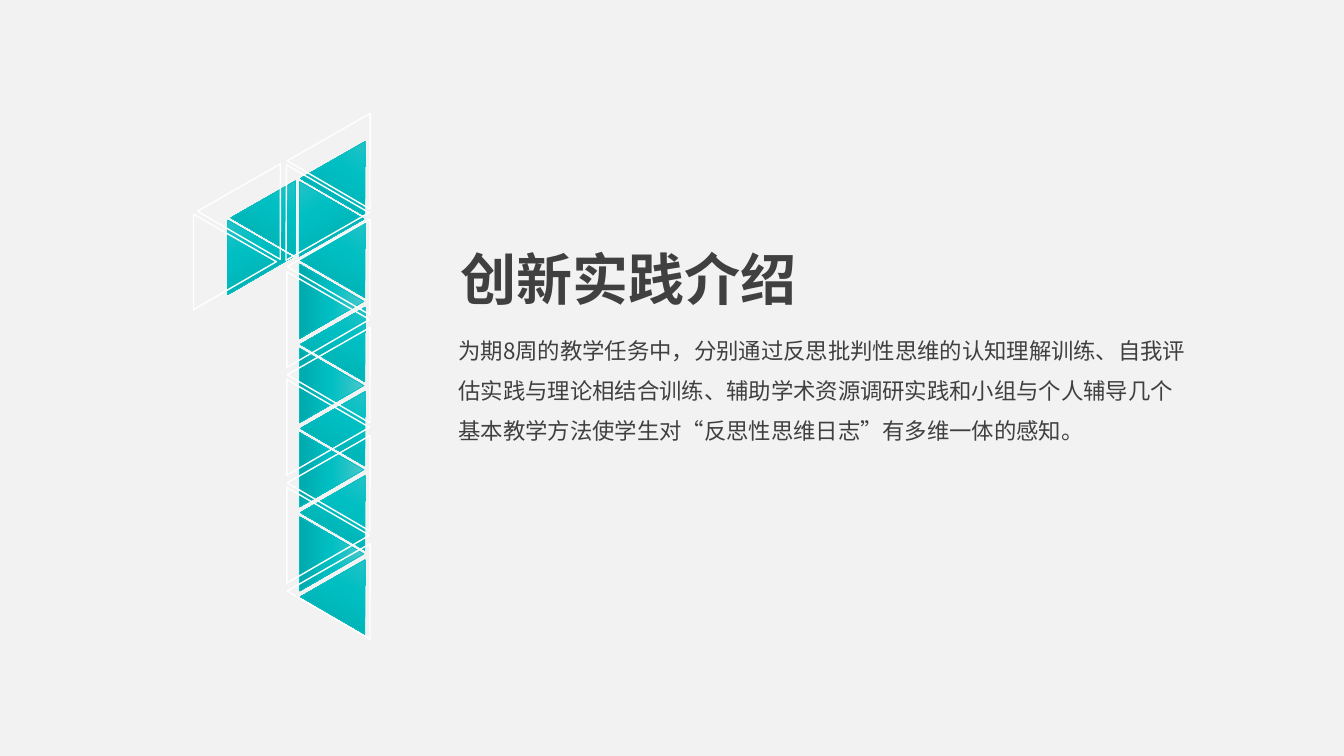
from copy import deepcopy

from pptx import Presentation
from pptx import util as u
from pptx.dml.color import RGBColor
from pptx.enum import shapes, text
from pptx.oxml import ns

PX = 9144
WIDE, HIGH = 1333, 750
PALE = RGBColor(0xF2, 0xF2, 0xF2)
DARK = RGBColor(0x40, 0x40, 0x40)
WHITE = RGBColor(0xFF, 0xFF, 0xFF)
LIGHT = RGBColor(0x4B, 0xC7, 0xCB)
TEAL = RGBColor(0x00, 0xBF, 0xC3)
DEEP = RGBColor(0x00, 0xAA, 0xAD)
LATIN = "League Spartan"
HAN = "Noto Sans CJK SC"

HEAD = "创新实践介绍"
BODY = ("为期8周的教学任务中，分别通过反思批判性思维的认知理解训练、自我评估实践与理论相结合训练、"
        "辅助学术资源调研实践和小组与个人辅导几个基本教学方法使学生对“反思性思维日志”有多维一体的感知。")


def px(*nums):
    return [u.Emu(round(n * PX)) for n in nums]


def write(shape, words, size, font, bold=False, gap=1.0,
          anchor=text.MSO_ANCHOR.TOP):
    frame = shape.text_frame
    frame.word_wrap = True
    frame.auto_size = text.MSO_AUTO_SIZE.NONE
    frame.vertical_anchor = anchor
    para = frame.paragraphs[0]
    para.alignment = text.PP_ALIGN.LEFT
    para.line_spacing = gap
    run = para.add_run()
    run.text = words
    run.font.size = u.Pt(size)
    run.font.bold = bold
    run.font.name = font
    run.font.color.rgb = DARK
    east = run.font._element.makeelement(ns.qn("a:ea"), {"typeface": HAN})
    run.font._element.find(ns.qn("a:latin")).addnext(east)


def shade(fill):
    fill.gradient()
    fill.gradient_angle = 270
    first = fill.gradient_stops[0]._gs
    first.addnext(deepcopy(first))
    for stop, place, tint in zip(fill.gradient_stops, (0, 0.5, 1), (LIGHT, TEAL, DEEP)):
        stop.position = place
        stop.color.rgb = tint


def wedge(group, box, turn, solid):
    shape = group.shapes.add_shape(shapes.MSO_SHAPE.ISOSCELES_TRIANGLE, *px(*box))
    shape.rotation = turn
    shape.shadow.inherit = False
    if solid:
        shade(shape.fill)
    else:
        shape.fill.background()
    shape.line.color.rgb = TEAL if solid else WHITE
    shape.line.width = u.Pt(0.5 if solid else 1)


def stack(x, y, step, count, turn):
    return [(x, y + step * i, turn) for i in range(count)]


def digit(slide, left, top):
    group = slide.shapes.add_group_shape()
    filled = [(40, 107, 329.9), (75, 68, 30.2), (111, 69, 330.2), (144, 29, 30.2)]
    filled += stack(144, 110, 83.5, 5, 30.2) + stack(127, 160, 83.5, 4, 90)
    hollow = [(0, 100, 329.9), (45, 50, 30.2), (92, 51, 330.2), (134, 0, 30.2)]
    hollow += stack(134, 105, 107.25, 4, 30.2) + stack(113, 169, 107, 3, 90)
    for solid, parts, size in ((True, filled, (74, 64)), (False, hollow, (95, 82))):
        for x, y, turn in parts:
            wedge(group, (left + x, top + y, *size), turn, solid)


def intro(slide, left, top):
    title = slide.shapes.title
    title.left, title.top, title.width, title.height = px(left + 2, top, 435, 68)
    write(title, HEAD, 40, LATIN, bold=True, gap=0.9, anchor=text.MSO_ANCHOR.MIDDLE)
    note = slide.shapes.add_textbox(*px(left, top + 70, 750, 68))
    write(note, BODY, 16, HAN, gap=u.Pt(28.6))


def main():
    deck = Presentation()
    deck.slide_width, deck.slide_height = px(WIDE, HIGH)
    slide = deck.slides.add_slide(deck.slide_layouts[5])
    slide.background.fill.solid()
    slide.background.fill.fore_color.rgb = PALE
    intro(slide, 445, 246)
    digit(slide, 165, 107)
    deck.save("out.pptx")


if __name__ == "__main__":
    main()
